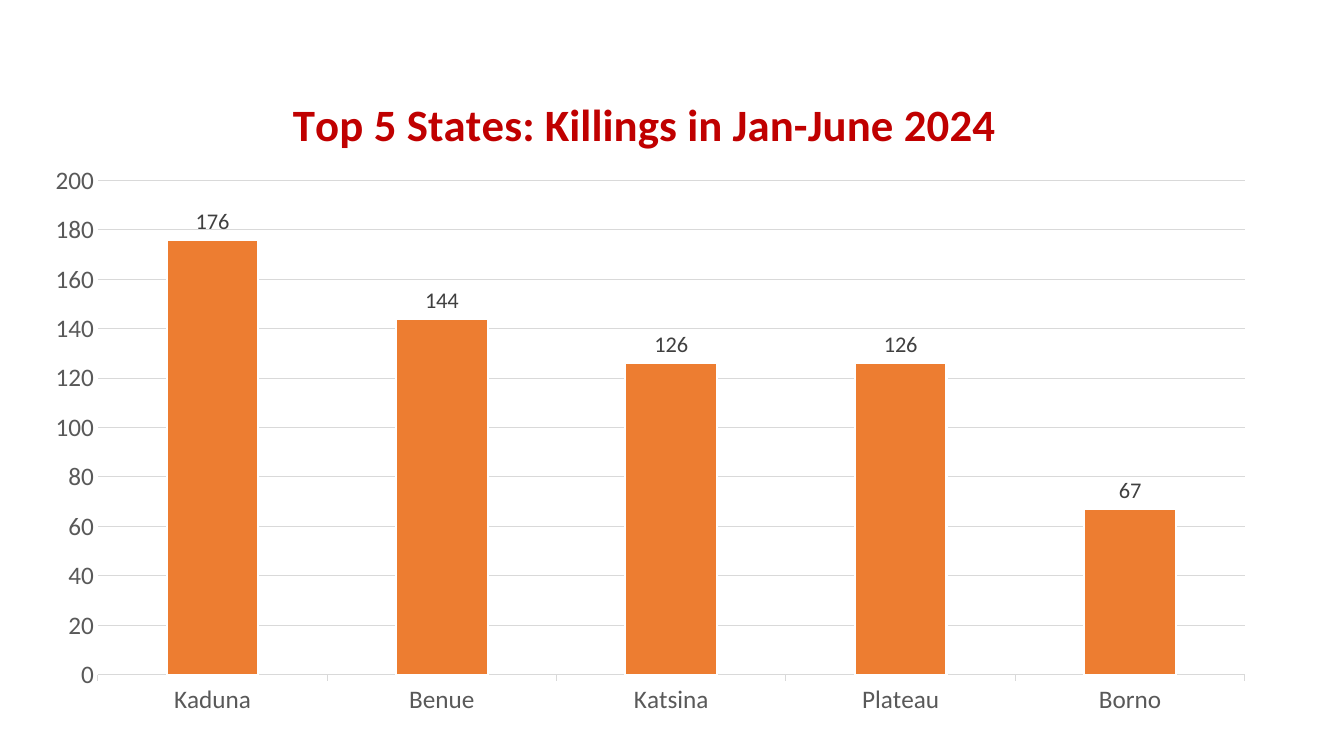
from lxml import etree
from pptx import Presentation
from pptx.chart.data import CategoryChartData
from pptx.dml.color import RGBColor
from pptx.enum.chart import XL_CHART_TYPE, XL_LABEL_POSITION, XL_TICK_MARK
from pptx.util import Cm, Pt

COLUMNS = XL_CHART_TYPE.COLUMN_CLUSTERED
OUTSIDE_END = XL_LABEL_POSITION.OUTSIDE_END
TICK_OUTSIDE = XL_TICK_MARK.OUTSIDE
TICK_NONE = XL_TICK_MARK.NONE
CHART_NS = "http://schemas.openxmlformats.org/drawingml/2006/chart"

FONT = "Calibri"
COLORS = {
    "title": "C00000",
    "bar": "ED7D31",
    "bar_edge": "FFFFFF",
    "grid": "D9D9D9",
    "axis_text": "595959",
    "label_text": "404040",
}
KILLINGS = {"Kaduna": 176, "Benue": 144, "Katsina": 126, "Plateau": 126, "Borno": 67}


def style_font(font, size, color, bold=False):
    font.name = FONT
    font.size = Pt(size)
    font.bold = bold
    font.color.rgb = RGBColor.from_string(COLORS[color])


def place(element, before, **settings):
    """Give a chart part a manual layout, in fractions of the chart's size."""
    for layout in element.findall(f"{{{CHART_NS}}}layout"):
        element.remove(layout)
    layout = etree.Element(f"{{{CHART_NS}}}layout")
    manual = etree.SubElement(layout, f"{{{CHART_NS}}}manualLayout")
    for name, value in settings.items():
        etree.SubElement(manual, f"{{{CHART_NS}}}{name}").set("val", str(value))
    element.insert(before, layout)


presentation = Presentation()
presentation.slide_width = Cm(33.87)
presentation.slide_height = Cm(19.05)
slide = presentation.slides.add_slide(presentation.slide_layouts[6])

# Chart
chart_data = CategoryChartData()
chart_data.categories = list(KILLINGS)
chart_data.add_series("Series 1", list(KILLINGS.values()))
chart = slide.shapes.add_chart(
    COLUMNS, Cm(0.58), Cm(1.3), Cm(31.42), Cm(17.07), chart_data
).chart
chart.has_legend = False
chart.font.name = FONT
chart.font.size = Pt(10)

# Title
title = chart.chart_title
title.text_frame.text = "Top 5 States: Killings in Jan-June 2024"
style_font(title.text_frame.paragraphs[0].runs[0].font, 32, "title", bold=True)
title.include_in_layout = False
place(title._element, 1, xMode="edge", yMode="edge", x=0.21, y=0.05)

# Columns and their labels
plot = chart.plots[0]
plot.gap_width = 150
plot.vary_by_categories = False
columns = plot.series[0]
columns.format.fill.solid()
columns.format.fill.fore_color.rgb = RGBColor.from_string(COLORS["bar"])
columns.format.line.color.rgb = RGBColor.from_string(COLORS["bar_edge"])
columns.format.line.width = Pt(1.5)
labels = columns.data_labels
labels.show_value = True
labels.position = OUTSIDE_END
style_font(labels.font, 16, "label_text")

# Axes
state_axis, count_axis = chart.category_axis, chart.value_axis
for axis in (state_axis, count_axis):
    style_font(axis.tick_labels.font, 18, "axis_text")
count_axis.minimum_scale = 0
count_axis.maximum_scale = 200
count_axis.major_unit = 20
count_axis.major_tick_mark = TICK_NONE
count_axis.format.line.fill.background()
state_axis.major_tick_mark = TICK_OUTSIDE
for line in (state_axis.format.line, count_axis.major_gridlines.format.line):
    line.color.rgb = RGBColor.from_string(COLORS["grid"])
    line.width = Pt(0.75)

plot_area = chart._chartSpace.chart.plotArea
place(plot_area, 0, layoutTarget="inner", xMode="edge", yMode="edge",
      x=0.06, y=0.19, w=0.92, h=0.73)

presentation.save("out.pptx")
